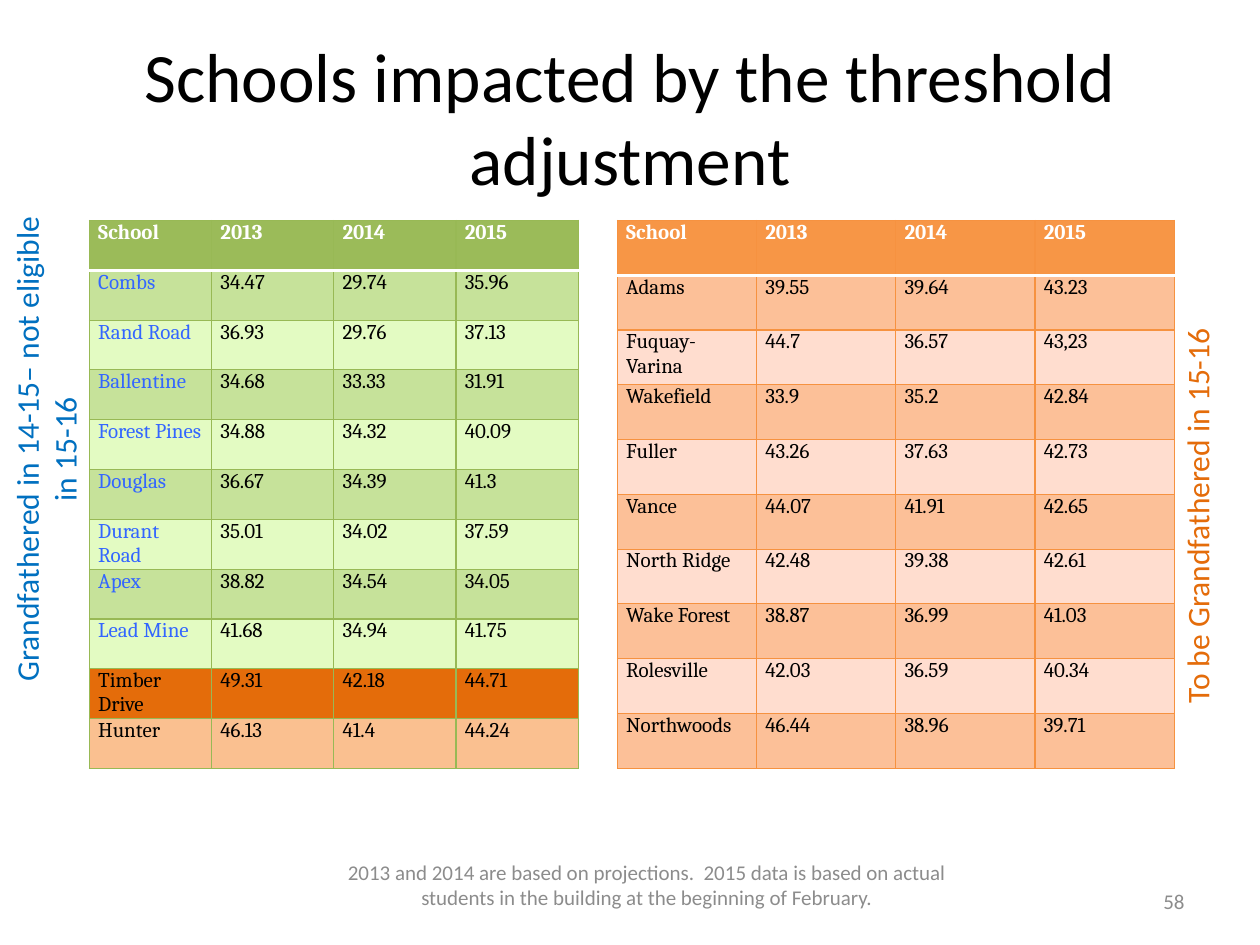
from lxml import etree
from pptx import Presentation
from pptx.dml.color import RGBColor
from pptx.enum.text import MSO_ANCHOR, MSO_AUTO_SIZE, PP_ALIGN
from pptx.oxml.ns import qn
from pptx.util import Inches, Pt

LEFT, CENTER, RIGHT = PP_ALIGN.LEFT, PP_ALIGN.CENTER, PP_ALIGN.RIGHT
TOP, MIDDLE = MSO_ANCHOR.TOP, MSO_ANCHOR.MIDDLE
NO_AUTOFIT = MSO_AUTO_SIZE.NONE

COLORS = {
    "black": "000000", "white": "FFFFFF", "gray": "8C8C8C",
    "blue": "0070C0", "school_blue": "3366FF",
    "orange": "E46C0A", "light_orange": "FAC090",
}
GREEN = {"header": "9BBB59", "line": "98B955", "bands": ("C6E29A", "E3FBC2")}
ORANGE = {"header": "F79646", "line": "F69240", "bands": ("FCC098", "FFDDCF")}

HEADER = ("School", "2013", "2014", "2015")
FORMER_SCHOOLS = [
    ("Combs", "34.47", "29.74", "35.96"),
    ("Rand Road", "36.93", "29.76", "37.13"),
    ("Ballentine", "34.68", "33.33", "31.91"),
    ("Forest Pines", "34.88", "34.32", "40.09"),
    ("Douglas", "36.67", "34.39", "41.3"),
    ("Durant Road", "35.01", "34.02", "37.59"),
    ("Apex", "38.82", "34.54", "34.05"),
    ("Lead Mine", "41.68", "34.94", "41.75"),
    ("Timber Drive", "49.31", "42.18", "44.71"),
    ("Hunter", "46.13", "41.4", "44.24"),
]
NEW_SCHOOLS = [
    ("Adams", "39.55", "39.64", "43.23"),
    ("Fuquay-Varina", "44.7", "36.57", "43,23"),
    ("Wakefield", "33.9", "35.2", "42.84"),
    ("Fuller", "43.26", "37.63", "42.73"),
    ("Vance", "44.07", "41.91", "42.65"),
    ("North Ridge", "42.48", "39.38", "42.61"),
    ("Wake Forest", "38.87", "36.99", "41.03"),
    ("Rolesville", "42.03", "36.59", "40.34"),
    ("Northwoods", "46.44", "38.96", "39.71"),
]
HIGHLIGHTS = {"Timber Drive": COLORS["orange"], "Hunter": COLORS["light_orange"]}


def set_attributes(target, values):
    for name, value in values.items():
        setattr(target, name, value)


def write_text(frame, text, size, color, font="Calibri", bold=False, align=LEFT):
    paragraph = frame.paragraphs[0]
    paragraph.alignment = align
    run = paragraph.add_run()
    run.text = text
    set_attributes(run.font, {"name": font, "size": Pt(size), "bold": bold})
    run.font.color.rgb = RGBColor.from_string(color)


def add_title(slide, box, text):
    title = slide.shapes.title
    set_attributes(title, dict(zip(("left", "top", "width", "height"), map(Inches, box))))
    set_attributes(title.text_frame, {
        "auto_size": NO_AUTOFIT, "word_wrap": True, "vertical_anchor": MIDDLE})
    write_text(title.text_frame, text, 39.6, COLORS["black"], align=CENTER)


def add_label(slide, box, text, size, color, align, anchor=TOP, rotation=0):
    label = slide.shapes.add_textbox(*map(Inches, box))
    label.rotation = rotation
    set_attributes(label.text_frame, {"word_wrap": True, "vertical_anchor": anchor})
    write_text(label.text_frame, text, size, color, align=align)


def set_borders(cell, borders):
    properties = cell._tc.get_or_add_tcPr()
    for index, side in enumerate("LRTB"):
        color, width = borders[side]
        line = etree.Element(qn(f"a:ln{side}"), w=str(Pt(width)))
        fill = etree.SubElement(line, qn("a:solidFill"))
        etree.SubElement(fill, qn("a:srgbClr"), val=color)
        properties.insert(index, line)


def format_cell(cell, text, fill, color, bold, borders):
    set_attributes(cell, {
        "margin_left": Inches(0.07), "margin_right": Inches(0.07),
        "margin_top": 0, "margin_bottom": 0, "vertical_anchor": TOP})
    cell.fill.solid()
    cell.fill.fore_color.rgb = RGBColor.from_string(fill)
    write_text(cell.text_frame, text, 12, color, "Cambria", bold)
    set_borders(cell, borders)


def add_school_table(slide, box, schools, theme, name_color):
    rows = [HEADER, *schools]
    left, top, width, height = map(Inches, box)
    table = slide.shapes.add_table(
        len(rows), len(HEADER), left, top, width, height).table
    table.horz_banding = False
    for column in table.columns:
        column.width = width // len(HEADER)
    for row in table.rows:
        row.height = height // len(rows)

    for row_index, values in enumerate(rows):
        is_header = row_index == 0
        borders = dict.fromkeys("LRTB", (theme["line"], 0.75))
        if row_index < 2:
            borders["B" if is_header else "T"] = (COLORS["white"], 2)
        band = theme["header"] if is_header else theme["bands"][(row_index - 1) % 2]
        fill = HIGHLIGHTS.get(values[0], band)
        for column_index, value in enumerate(values):
            color = COLORS["black"]
            if is_header:
                color = COLORS["white"]
            elif column_index == 0 and values[0] not in HIGHLIGHTS:
                color = name_color
            format_cell(table.cell(row_index, column_index), value, fill,
                        color, is_header, borders)


def main():
    presentation = Presentation()
    set_attributes(presentation, {"slide_width": Inches(10), "slide_height": Inches(7.5)})
    slide = presentation.slides.add_slide(presentation.slide_layouts.get_by_name("Title Only"))

    add_title(slide, (0.5, 0.3, 9, 1.25), "Schools impacted by the threshold adjustment")
    add_school_table(slide, (4.9, 1.75, 4.42, 4.35), NEW_SCHOOLS, ORANGE, COLORS["black"])
    add_school_table(slide, (0.71, 1.75, 3.88, 4.35), FORMER_SCHOOLS, GREEN,
                     COLORS["school_blue"])
    add_label(slide, (2.4, 6.69, 5.47, 0.66),
              "2013 and 2014 are based on projections.  2015 data is based on actual "
              "students in the building at the beginning of February.",
              12, COLORS["gray"], CENTER, MIDDLE)
    add_label(slide, (7.17, 6.95, 2.33, 0.4), "58", 12, COLORS["gray"], RIGHT, MIDDLE)
    add_label(slide, (-1.65, 3.21, 4.03, 0.71),
              "Grandfathered in 14-15– not eligible in 15-16",
              18, COLORS["blue"], CENTER, rotation=270)
    add_label(slide, (7.83, 3.81, 3.34, 0.4), "To be Grandfathered in 15-16",
              18, COLORS["orange"], LEFT, rotation=270)
    presentation.save("out.pptx")


if __name__ == "__main__":
    main()
